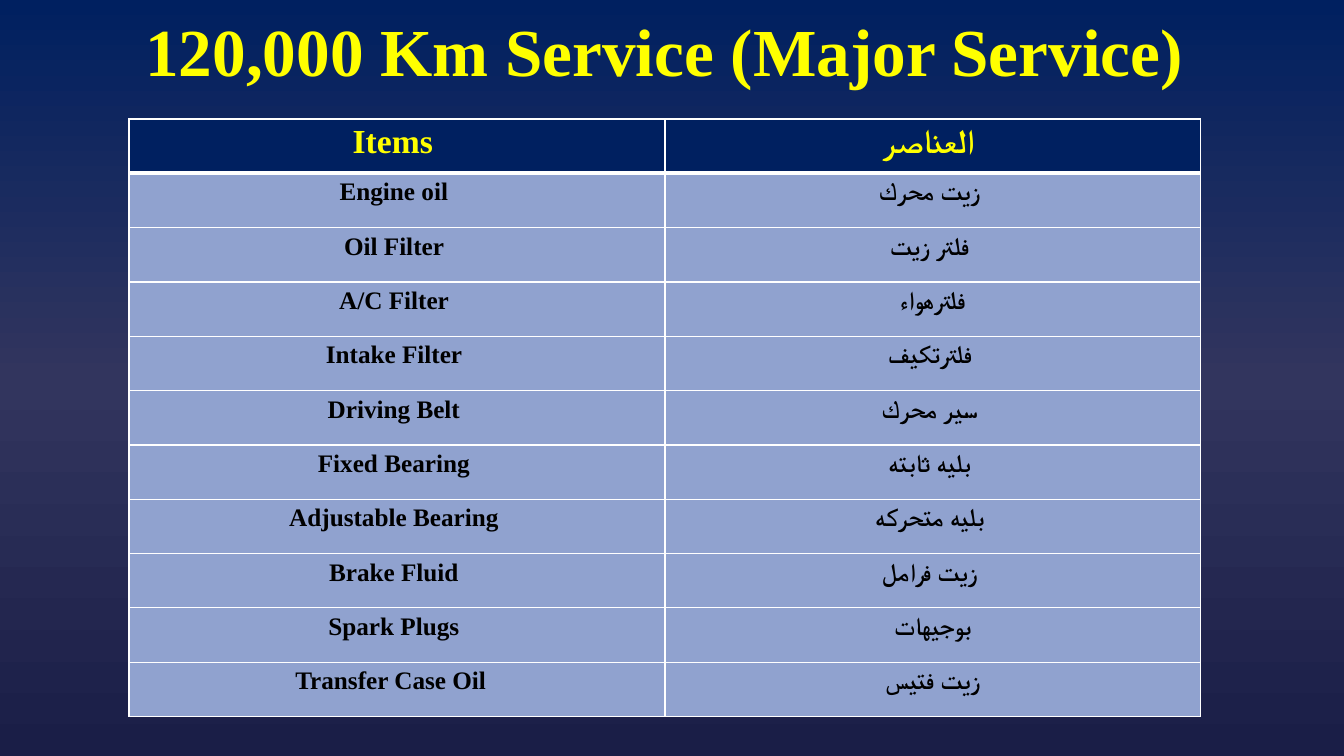
from copy import deepcopy

from lxml.etree import SubElement
from pptx import Presentation
from pptx.dml.color import RGBColor
from pptx.enum.text import MSO_ANCHOR, PP_ALIGN
from pptx.oxml.ns import qn
from pptx.util import Inches, Pt

COLORS = {
    "navy": "002060",
    "dusk": "32355E",
    "night": "1A1E47",
    "yellow": "FFFF00",
    "periwinkle": "90A2CF",
    "black": "000000",
    "white": "FFFFFF",
}
FONT = "Times New Roman"
SERVICE_ITEMS = [
    ("Items ", "العناصر "),
    ("Engine oil ", "زيت محرك "),
    ("Oil Filter ", "فلتر زيت "),
    ("A/C Filter ", "فلترهواء"),
    ("Intake Filter ", "فلترتكيف "),
    ("Driving Belt ", "سير محرك "),
    ("Fixed Bearing ", "بليه ثابته "),
    ("Adjustable Bearing ", "بليه متحركه "),
    ("Brake Fluid ", "زيت فرامل "),
    ("Spark Plugs ", "بوجيهات"),
    ("Transfer Case Oil  ", "زيت فتيس"),
]


def write_centered(text_frame, text, size, color):
    text_frame.text = text
    paragraph = text_frame.paragraphs[0]
    paragraph.alignment = PP_ALIGN.CENTER
    run = paragraph.runs[0]
    run.font.name = FONT
    run.font.size = Pt(size)
    run.font.bold = True
    run.font.color.rgb = RGBColor.from_string(COLORS[color])
    SubElement(run.font._element, qn("a:cs"), typeface=FONT)


def set_borders(cell, bottom_width, top_width):
    """Draw white cell borders; they must precede the fill in the cell XML."""
    widths = {"a:lnL": 1, "a:lnR": 1, "a:lnT": top_width, "a:lnB": bottom_width}
    properties = cell._tc.get_or_add_tcPr()
    for tag, width in widths.items():
        line = SubElement(properties, qn(tag), w=str(Pt(width)))
        solid = SubElement(line, qn("a:solidFill"))
        SubElement(solid, qn("a:srgbClr"), val=COLORS["white"])


presentation = Presentation()
presentation.slide_width = Inches(13.33)
presentation.slide_height = Inches(7.5)
slide = presentation.slides.add_slide(presentation.slide_layouts[6])

# Background: three-stop gradient running from top to bottom
background = slide.background.fill
background.gradient()
background.gradient_angle = 270
stop_list = next(slide._element.iter(qn("a:gsLst")))
stop_list.insert(1, deepcopy(stop_list[0]))
for stop, position, color in zip(
    background.gradient_stops, (0, 0.5, 1), ("navy", "dusk", "night")
):
    stop.position = position
    stop.color.rgb = RGBColor.from_string(COLORS[color])

# Title
title = slide.shapes.add_textbox(Inches(0.84), Inches(0.22), Inches(11.5), Inches(0.65))
title.text_frame.word_wrap = True
title.text_frame.vertical_anchor = MSO_ANCHOR.MIDDLE
write_centered(title.text_frame, "120,000 Km Service (Major Service)", 48, "yellow")
title.text_frame.paragraphs[0].line_spacing = 0.9

# Service items in English and Arabic
table = slide.shapes.add_table(
    len(SERVICE_ITEMS), 2, Inches(1.28), Inches(1.18), Inches(10.63), Inches(5.93)
).table
for row_index, names in enumerate(SERVICE_ITEMS):
    is_header = row_index == 0
    size, text_color, fill_color = (
        (24, "yellow", "navy") if is_header else (18, "black", "periwinkle")
    )
    for column_index, name in enumerate(names):
        cell = table.cell(row_index, column_index)
        write_centered(cell.text_frame, name, size, text_color)
        set_borders(
            cell,
            bottom_width=3 if is_header else 1,
            top_width=3 if row_index == 1 else 1,
        )
        cell.fill.solid()
        cell.fill.fore_color.rgb = RGBColor.from_string(COLORS[fill_color])

presentation.save("out.pptx")
